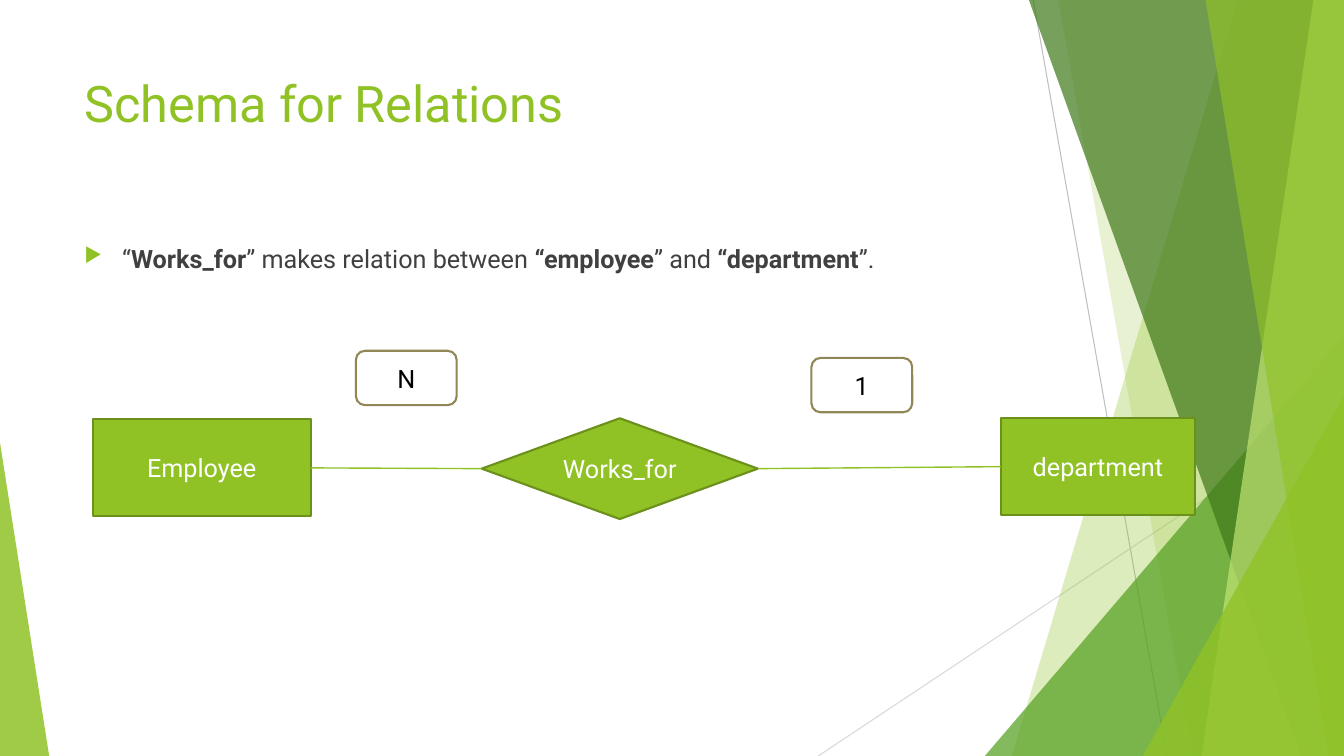
from lxml.etree import SubElement
from pptx import Presentation
from pptx.dml.color import RGBColor
from pptx.enum.shapes import MSO_CONNECTOR, MSO_SHAPE
from pptx.enum.text import MSO_ANCHOR, PP_ALIGN
from pptx.oxml.ns import qn
from pptx.util import Cm, Pt

WIDE, HIGH = 33.87, 19.05
GREEN, EDGE, WHITE = "90C226", "6B901C", "FFFFFF"


def color(code):
    return RGBColor.from_string(code)


def apply(item, values):
    for name, value in values.items():
        setattr(item, name, value)


def paint(shape, fill, alpha=100, edge=None):
    shape.shadow.inherit = False
    shape.fill.solid()
    shape.fill.fore_color.rgb = color(fill)
    if alpha < 100:
        tint = shape.element.spPr.find(f"{qn('a:solidFill')}/{qn('a:srgbClr')}")
        SubElement(tint, qn("a:alpha"), val=str(alpha * 1000))
    if edge:
        shape.line.color.rgb = color(edge)
        shape.line.width = Pt(1.5)
    else:
        shape.line.fill.background()


def link(slide, start, end, tone, width):
    line = slide.shapes.add_connector(
        MSO_CONNECTOR.STRAIGHT, *[Cm(v) for v in (*start, *end)])
    line.line.color.rgb = color(tone)
    line.line.width = Pt(width)
    SubElement(line.element.spPr, qn("a:effectLst"))
    return line


def write(para, text, size, tone, bold=False):
    run = para.add_run()
    run.text = text
    apply(run.font, {"name": "Roboto", "size": Pt(size), "bold": bold})
    run.font.color.rgb = color(tone)


def pane(slide, box, top, foot, tone, alpha):
    left, head, width, height = box
    right, base = left + width, head + height
    spots = [(right, head), (right, base), (left + foot, base)]
    path = slide.shapes.build_freeform(Cm(left + top), Cm(head))
    path.add_line_segments([(Cm(x), Cm(y)) for x, y in spots], close=True)
    paint(path.convert_to_shape(), tone, alpha)


def wedge(slide, box, peak, tone, alpha):
    shape = slide.shapes.add_shape(
        MSO_SHAPE.ISOSCELES_TRIANGLE, *[Cm(v) for v in box])
    shape.adjustments[0] = peak
    paint(shape, tone, alpha)


def backdrop(slide, box):
    left, top, width, height = box
    right, base = left + width, top + height

    def corner(wide, high):
        return right - wide, base - high, wide, high

    link(slide, (left + 26.04, top), (left + 29.41, base), "BFBFBF", 0.75)
    link(slide, (right, top + 10.24), (left + 20.62, base), "D9D9D9", 0.75)
    pane(slide, box, 31.19, 25.5, GREEN, 30)
    pane(slide, box, 26.67, 30.05, GREEN, 20)
    wedge(slide, corner(9.05, 10.59), 1, "54A021", 72)
    pane(slide, box, 25.93, 32.79, "3F7819", 70)
    pane(slide, box, 33.1, 30.28, "C0E474", 70)
    pane(slide, box, 30.38, 33.48, GREEN, 65)
    wedge(slide, corner(5.07, 9.07), 1, GREEN, 80)
    wedge(slide, (left, base - 7.9, 1.24, 7.9), 0, GREEN, 85)


def area(slide, box):
    frame = slide.shapes.add_textbox(*[Cm(v) for v in box]).text_frame
    apply(frame, {"word_wrap": True, "vertical_anchor": MSO_ANCHOR.TOP})
    return frame.paragraphs[0]


def title(slide, box):
    write(area(slide, box), "Schema for Relations", 36, GREEN)


def body(slide, box):
    para = area(slide, box)
    props = para._p.get_or_add_pPr()
    apply_indent = {"marL": Cm(0.95), "indent": -Cm(0.95)}
    for name, value in apply_indent.items():
        props.set(name, str(value))
    SubElement(SubElement(props, qn("a:buClr")), qn("a:srgbClr"), val=GREEN)
    SubElement(props, qn("a:buSzPct"), val="80000")
    SubElement(props, qn("a:buChar"), char="▶")
    parts = ["“", "Works_for", "” makes relation between ", "“employee",
             "” and ", "“department", "”."]
    for rank, part in enumerate(parts):
        write(para, part, 18, "404040", rank % 2 == 1)


def node(slide, kind, box, text, fill, edge, tone):
    shape = slide.shapes.add_shape(kind, *[Cm(v) for v in box])
    paint(shape, fill, edge=edge)
    frame = shape.text_frame
    apply(frame, {"word_wrap": True, "vertical_anchor": MSO_ANCHOR.MIDDLE})
    para = frame.paragraphs[0]
    para.alignment = PP_ALIGN.CENTER
    write(para, text, 18, tone)
    return shape


def diagram(slide, box):
    left, top, width, height = box

    def part(kind, x, y, wide, high, text, *tones):
        return node(slide, kind, (left + x, top + y, wide, high), text, *tones)

    main = (GREEN, EDGE, WHITE)
    staff = part(MSO_SHAPE.RECTANGLE, 0, 1.73, 5.49, 2.44, "Employee", *main)
    unit = part(MSO_SHAPE.RECTANGLE, width - 4.9, 1.7, 4.9, 2.44,
                "department", *main)
    works = part(MSO_SHAPE.DIAMOND, 9.8, 1.7, 6.96, height - 1.7,
                 "Works_for", *main)
    for first, second in ((works, unit), (staff, works)):
        line = link(slide, (left, top), (left, top), GREEN, 1)
        line.begin_connect(first, 3)
        line.end_connect(second, 1)
    for x, y, text in ((6.63, 0, "N"), (18.11, 0.18, "1")):
        part(MSO_SHAPE.ROUNDED_RECTANGLE, x, y, 2.54, 1.37, text,
             WHITE, "918655", "000000")


def main():
    deck = Presentation()
    apply(deck, {"slide_width": Cm(WIDE), "slide_height": Cm(HIGH)})
    slide = deck.slides.add_slide(deck.slide_layouts[6])
    backdrop(slide, (0, 0, WIDE, HIGH))
    title(slide, (1.88, 1.7, 23.88, 3.66))
    body(slide, (1.88, 6, 23.88, 2))
    diagram(slide, (2.34, 8.84, 27.78, 4.24))
    deck.save("out.pptx")


if __name__ == "__main__":
    main()
